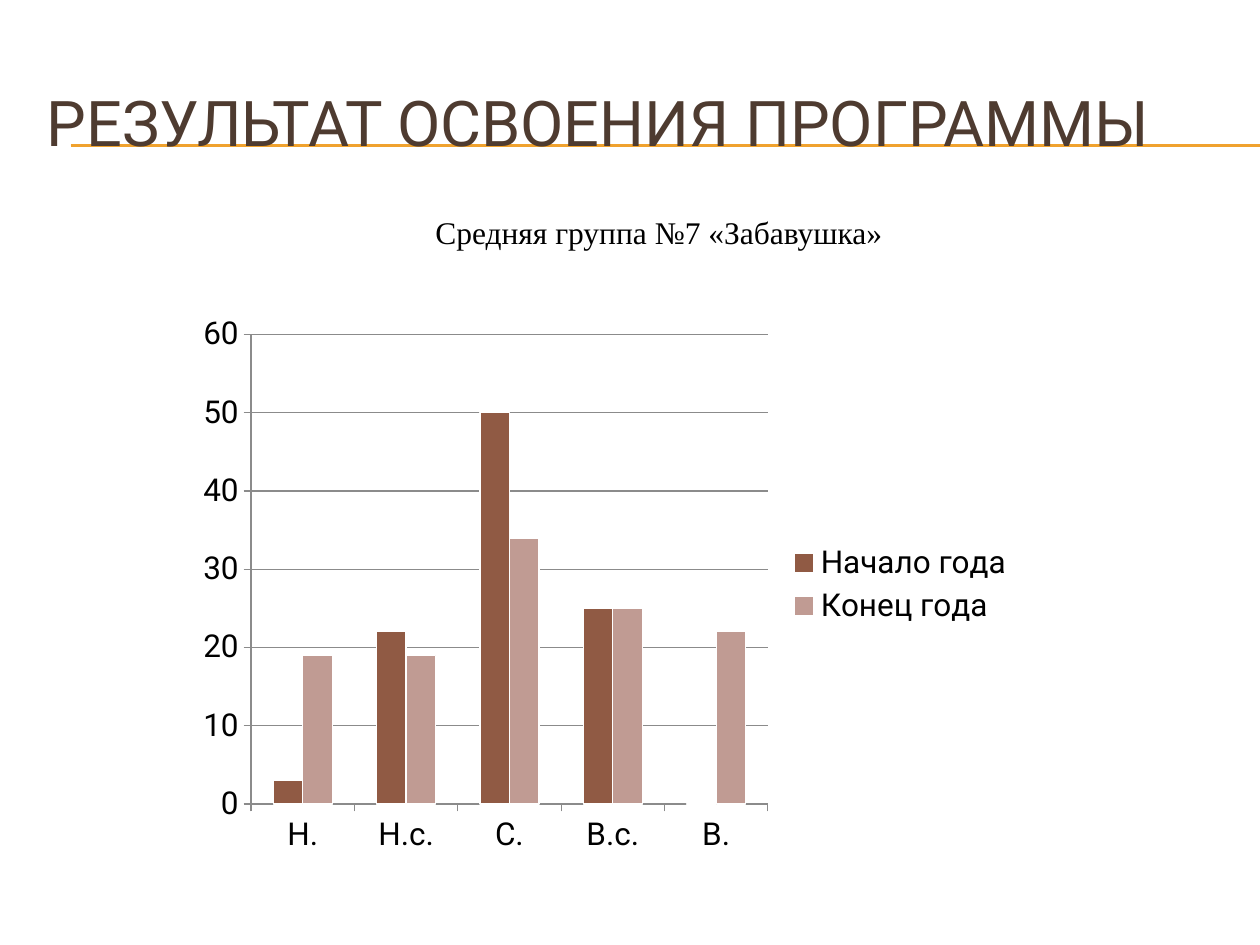
from lxml import etree
from pptx import Presentation
from pptx.chart.data import CategoryChartData
from pptx.dml.color import RGBColor
from pptx.enum.chart import XL_CHART_TYPE, XL_LEGEND_POSITION, XL_TICK_MARK
from pptx.enum.shapes import MSO_CONNECTOR
from pptx.enum.text import MSO_ANCHOR, PP_ALIGN
from pptx.oxml.ns import qn
from pptx.util import Inches, Pt

COLUMN = XL_CHART_TYPE.COLUMN_CLUSTERED
LEGEND_RIGHT = XL_LEGEND_POSITION.RIGHT
TICK_OUTSIDE = XL_TICK_MARK.OUTSIDE
STRAIGHT = MSO_CONNECTOR.STRAIGHT
MIDDLE = MSO_ANCHOR.MIDDLE
LEFT, CENTER = PP_ALIGN.LEFT, PP_ALIGN.CENTER


class Theme:
    title = RGBColor(0x4E, 0x3B, 0x30)
    text = RGBColor(0, 0, 0)
    rule = RGBColor(0xF0, 0xA2, 0x2E)
    grid = RGBColor(0x8B, 0x8B, 0x8B)
    white = RGBColor(0xFF, 0xFF, 0xFF)
    series = [RGBColor(0x90, 0x5A, 0x44), RGBColor(0xC0, 0x9B, 0x93)]
    title_size = Pt(36)
    body_size = Pt(18)
    main_font = "Roboto"
    subtitle_font = "Times New Roman"


def write_text(shape, text, *, font, size, color, align):
    frame = shape.text_frame
    frame.word_wrap = True
    frame.vertical_anchor = MIDDLE
    paragraph = frame.paragraphs[0]
    paragraph.alignment = align
    run = paragraph.add_run()
    run.text = text
    run.font.name = font
    run.font.size = size
    run.font.color.rgb = color


presentation = Presentation()
presentation.slide_width = Inches(10)
presentation.slide_height = Inches(7.5)
slide = presentation.slides.add_slide(presentation.slide_layouts[5])
slide.background.fill.solid()
slide.background.fill.fore_color.rgb = Theme.white

for y in (1.15, 1.16):
    rule = slide.shapes.add_connector(
        STRAIGHT, Inches(0.56), Inches(y), Inches(10), Inches(y))
    rule.line.color.rgb = Theme.rule
    rule.line.width = Pt(0.75)
    etree.SubElement(rule.element.spPr, qn("a:effectLst"))

title = slide.shapes.title
title.left, title.top = Inches(0.27), Inches(0.5)
title.width, title.height = Inches(9.5), Inches(0.92)
write_text(title, "РЕЗУЛЬТАТ ОСВОЕНИЯ ПРОГРАММЫ", font=Theme.main_font,
           size=Theme.title_size, color=Theme.title, align=LEFT)
rule.element.addnext(title.element)

chart_data = CategoryChartData()
chart_data.categories = ["Н.", "Н.с.", "С.", "В.с.", "В."]
chart_data.add_series("Начало года", [3, 22, 50, 25, 0])
chart_data.add_series("Конец года", [19, 19, 34, 25, 22])
chart = slide.shapes.add_chart(
    COLUMN, Inches(1.48), Inches(2.42), Inches(6.67), Inches(4.44), chart_data).chart
chart.has_title = False
chart.font.name = Theme.main_font
chart.font.size = Theme.body_size
chart.font.color.rgb = Theme.text
chart.has_legend = True
chart.legend.position = LEGEND_RIGHT
chart.legend.include_in_layout = False

plot = chart.plots[0]
plot.gap_width = 150
plot.overlap = 0
plot.vary_by_categories = False
for series, color in zip(plot.series, Theme.series):
    series.format.fill.solid()
    series.format.fill.fore_color.rgb = color
    series.format.line.color.rgb = Theme.white
    series.format.line.width = Pt(0.75)

value_axis = chart.value_axis
value_axis.minimum_scale = 0
value_axis.maximum_scale = 60
value_axis.major_unit = 10
value_axis.has_major_gridlines = True
for axis in (chart.category_axis, value_axis):
    axis.major_tick_mark = TICK_OUTSIDE
for part in (chart.category_axis, value_axis, value_axis.major_gridlines):
    part.format.line.color.rgb = Theme.grid
    part.format.line.width = Pt(0.75)

subtitle = slide.shapes.add_textbox(
    Inches(1.95), Inches(1.64), Inches(6.56), Inches(0.4))
write_text(subtitle, "Средняя группа №7 «Забавушка»", font=Theme.subtitle_font,
           size=Theme.body_size, color=Theme.text, align=CENTER)

presentation.save("out.pptx")
